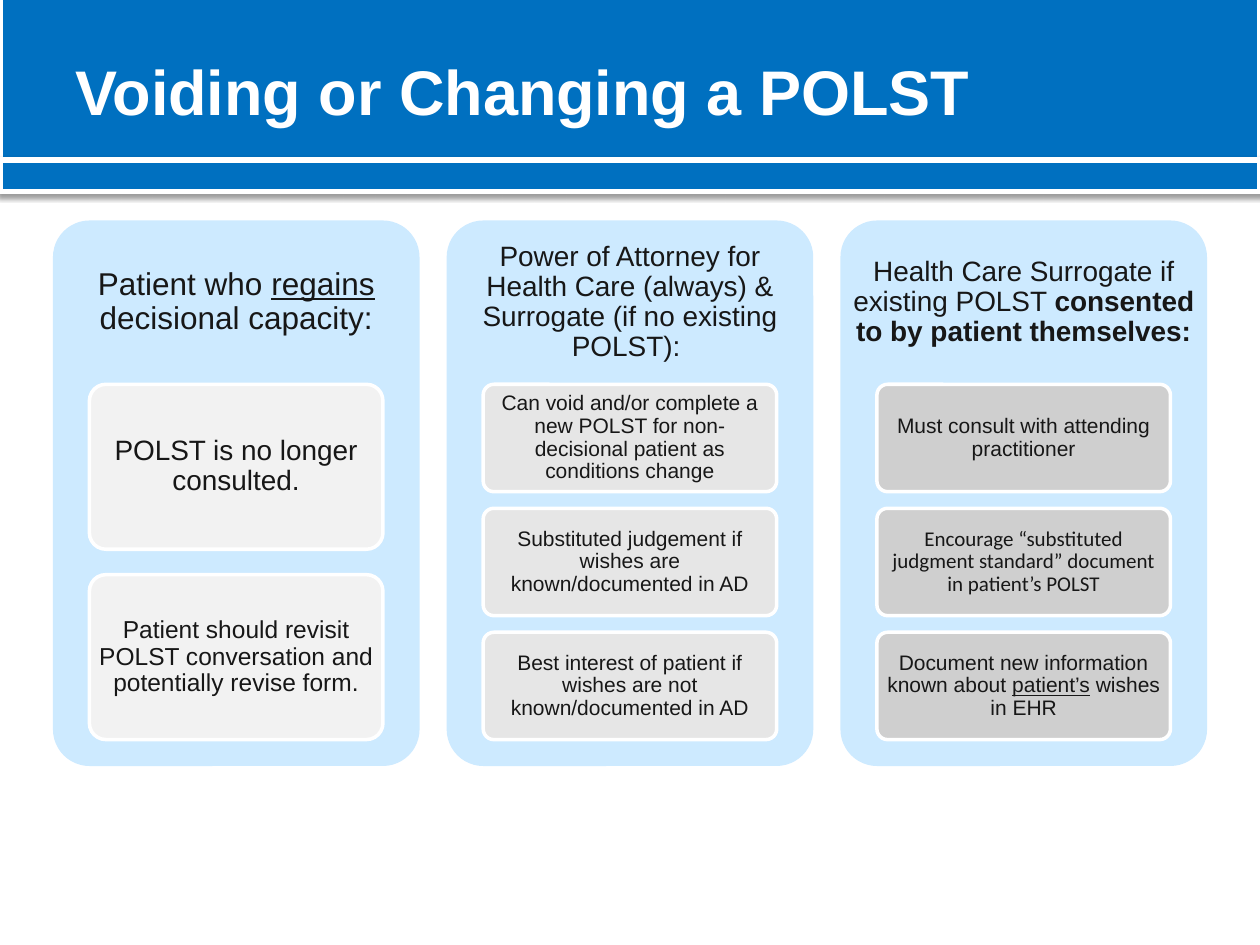
from dataclasses import dataclass

import pptx
import pptx.dml.color
import pptx.enum.shapes
import pptx.enum.text
import pptx.oxml
import pptx.oxml.ns
import pptx.util

Inches = pptx.util.Inches
Pt = pptx.util.Pt
SHAPES = pptx.enum.shapes.MSO_SHAPE
ALIGN = pptx.enum.text.PP_ALIGN


@dataclass(frozen=True)
class Theme:
    band: str = "0070C0"
    white: str = "FFFFFF"
    panel: str = "CDEAFF"
    text: str = "171717"
    font: str = "Arial"
    title_size: int = 36
    band_line: int = 3
    card_line: int = 2


THEME = Theme()

PANEL_LEFT, PANEL_TOP, PANEL_WIDTH, PANEL_HEIGHT = 0.42, 1.75, 2.91, 4.33
PANEL_PITCH = 3.125
HEADING_HEIGHT = 1.3
CARD_INDENT, CARD_WIDTH = 0.29, 2.33
CARDS_HEIGHT = 2.82
GAP_RATIO = 0.154  # gap between cards, as a share of a card's height

# A text is a list of runs: the words and the format that differs from the default.
COLUMNS = [
    {
        "heading": [("Patient who ", {}), ("regains", {"underline": True}),
                    (" decisional capacity:", {})],
        "heading_size": 18,
        "card_fill": "F2F2F2",
        "cards": [
            (16, [("POLST is no longer consulted.", {})]),
            (14, [("Patient should revisit POLST conversation and potentially revise form.", {})]),
        ],
    },
    {
        "heading": [("Power of Attorney for Health Care (always) & Surrogate "
                     "(if no existing POLST): ", {})],
        "heading_size": 16,
        "card_fill": "E6E6E6",
        "cards": [
            (12, [("Can void and/or complete a new POLST for non-decisional patient "
                   "as conditions change", {})]),
            (12, [("Substituted judgement if wishes are known/documented in AD", {})]),
            (12, [("Best interest of patient if wishes are not known/documented in AD", {})]),
        ],
    },
    {
        "heading": [("Health Care Surrogate if existing POLST ", {}),
                    ("consented to by patient themselves:", {"bold": True})],
        "heading_size": 16,
        "card_fill": "CFCFCF",
        "cards": [
            (12, [("Must consult with attending practitioner", {})]),
            (12, [("Encourage “substituted judgment standard” document in patient’s POLST",
                   {"name": "Calibri"})]),
            (12, [("Document new information known about ", {}),
                  ("patient’s", {"underline": True}), (" wishes in EHR", {})]),
        ],
    },
]


def rgb(value):
    return pptx.dml.color.RGBColor.from_string(value)


def set_attributes(target, values):
    for name, value in values.items():
        setattr(target, name, value)


def add_block(slide, kind, box, fill, line_width=0):
    """Add a filled shape, with a white outline if line_width is given."""
    shape = slide.shapes.add_shape(kind, *map(Inches, box))
    shape.shadow.inherit = False
    shape.fill.solid()
    shape.fill.fore_color.rgb = rgb(fill)
    if line_width:
        shape.line.color.rgb = rgb(THEME.white)
        shape.line.width = Pt(line_width)
    else:
        shape.line.fill.background()
    if kind == SHAPES.ROUNDED_RECTANGLE:
        shape.adjustments[0] = 0.1
    return shape


def add_drop_shadow(shape):
    effects = shape._element.spPr.find(pptx.oxml.ns.qn("a:effectLst"))
    effects.append(pptx.oxml.parse_xml(
        f'<a:outerShdw {pptx.oxml.ns.nsdecls("a")} blurRad="{Pt(3.1)}" dist="{Pt(1.6)}" '
        'dir="5400000" rotWithShape="0"><a:srgbClr val="000000">'
        '<a:alpha val="38000"/></a:srgbClr></a:outerShdw>'))


def write_text(shape, runs, size, margins, color=THEME.text, alignment=ALIGN.CENTER,
               line_spacing=0.9):
    """Fill the shape with one paragraph; margins are horizontal and vertical inches."""
    horizontal, vertical = map(Inches, margins)
    frame = shape.text_frame
    set_attributes(frame, {
        "word_wrap": True,
        "vertical_anchor": pptx.enum.text.MSO_ANCHOR.MIDDLE,
        "margin_left": horizontal, "margin_right": horizontal,
        "margin_top": vertical, "margin_bottom": vertical,
    })
    paragraph = frame.paragraphs[0]
    set_attributes(paragraph, {"alignment": alignment, "line_spacing": line_spacing})
    for text, changes in runs:
        run = paragraph.add_run()
        run.text = text
        set_attributes(run.font, {"name": THEME.font, "size": Pt(size), **changes})
        run.font.color.rgb = rgb(color)


def add_text(slide, box, runs, size, margins, **options):
    write_text(slide.shapes.add_textbox(*map(Inches, box)), runs, size, margins, **options)


def add_header(slide):
    for top, height in ((-0.05, 1.32), (1.27, 0.25)):
        band = add_block(slide, SHAPES.RECTANGLE, (0, top, 10, height),
                         THEME.band, THEME.band_line)
        add_drop_shadow(band)
    add_text(slide, (0.5, 0.09, 9, 1.25), [("Voiding or Changing a POLST", {"bold": True})],
             THEME.title_size, (0.1, 0.05), color=THEME.white,
             alignment=ALIGN.LEFT, line_spacing=1.0)


def add_column(slide, left, column):
    add_block(slide, SHAPES.ROUNDED_RECTANGLE,
              (left, PANEL_TOP, PANEL_WIDTH, PANEL_HEIGHT), THEME.panel)
    add_text(slide, (left, PANEL_TOP, PANEL_WIDTH, HEADING_HEIGHT),
             column["heading"], column["heading_size"], (0.07, 0.07))
    count = len(column["cards"])
    height = CARDS_HEIGHT / (count + (count - 1) * GAP_RATIO)
    for row, (size, runs) in enumerate(column["cards"]):
        top = PANEL_TOP + HEADING_HEIGHT + row * height * (1 + GAP_RATIO)
        card = add_block(slide, SHAPES.ROUNDED_RECTANGLE,
                         (left + CARD_INDENT, top, CARD_WIDTH, height),
                         column["card_fill"], THEME.card_line)
        write_text(card, runs, size, (0.03, 0.03))


def main():
    presentation = pptx.Presentation()
    presentation.slide_width = Inches(10)
    presentation.slide_height = Inches(7.5)
    slide = presentation.slides.add_slide(presentation.slide_layouts[6])
    add_header(slide)
    for index, column in enumerate(COLUMNS):
        add_column(slide, PANEL_LEFT + index * PANEL_PITCH, column)
    presentation.save("out.pptx")


if __name__ == "__main__":
    main()
